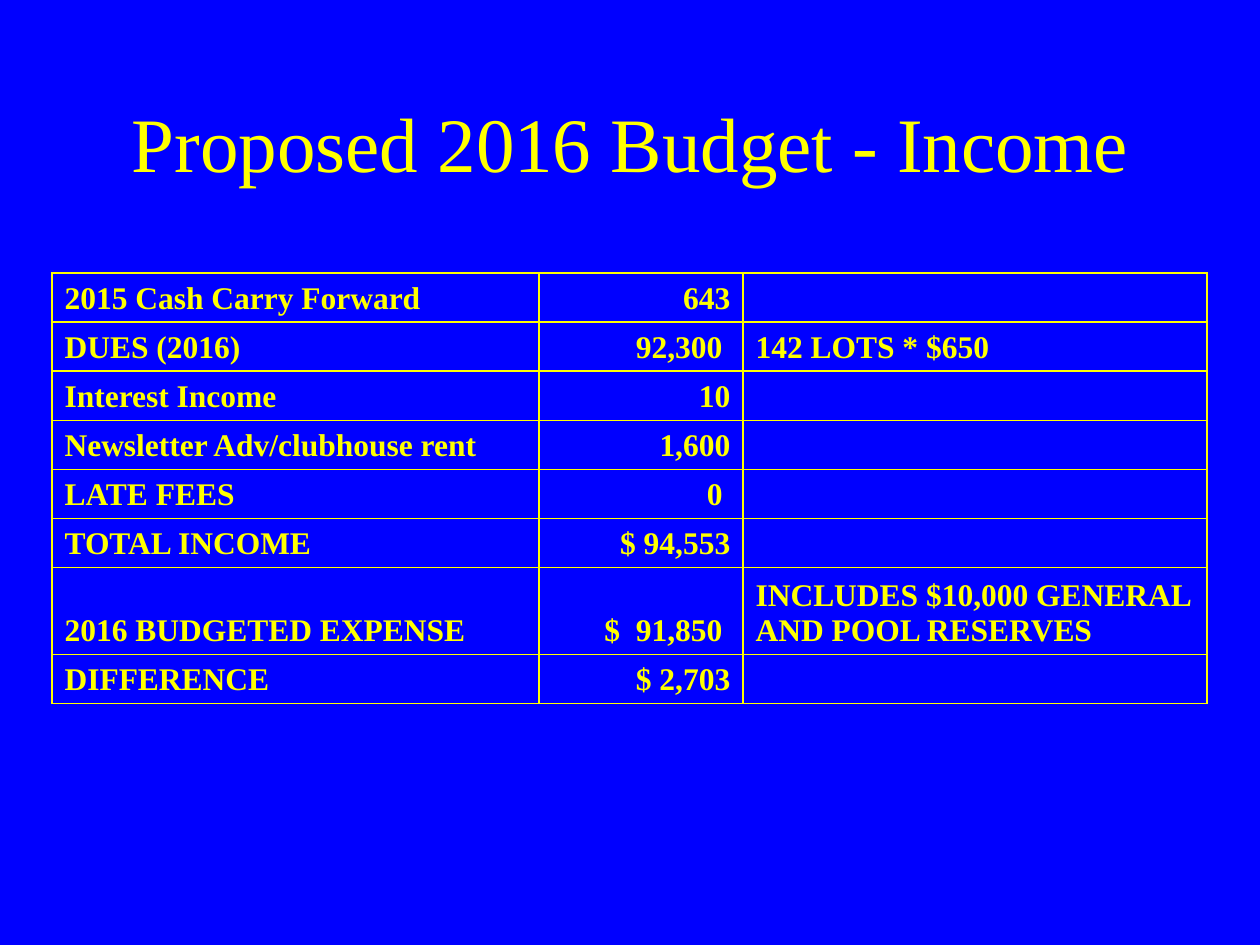
from dataclasses import dataclass

from lxml.etree import SubElement
from pptx import Presentation
from pptx.dml.color import RGBColor
from pptx.enum.text import MSO_ANCHOR as Anchor, PP_ALIGN as Align
from pptx.oxml.ns import qn
from pptx.util import Emu, Pt

EMU_PER_PX = 914400 / 126
COLORS = {"background": "0000FF", "ink": "FFFF00"}
FONT = "Times New Roman"
TITLE_FORMAT = {"name": FONT, "size": Pt(44), "bold": False}
CELL_FORMAT = {"name": FONT, "size": Pt(18), "bold": True}
COLUMN_WIDTHS = (487, 204, 464)
COLUMN_ALIGNS = (Align.LEFT, Align.RIGHT, Align.LEFT)
TOP_MARGIN = 5


@dataclass
class BudgetRow:
    height: int
    label: str
    amount: str
    note: str = ""


BUDGET = [
    BudgetRow(47, "2015 Cash Carry Forward", "643"),
    BudgetRow(48, "DUES (2016)", "92,300 ", "142 LOTS * $650"),
    BudgetRow(47, "Interest Income", "10"),
    BudgetRow(48, "Newsletter Adv/clubhouse rent", "1,600"),
    BudgetRow(47, "LATE FEES", "0 "),
    BudgetRow(48, "TOTAL INCOME", "$ 94,553"),
    BudgetRow(82, "2016 BUDGETED EXPENSE", "$  91,850 ",
              "INCLUDES $10,000 GENERAL AND POOL RESERVES"),
    BudgetRow(48, "DIFFERENCE", "$ 2,703"),
]


def px(length: int) -> Emu:
    return Emu(round(length * EMU_PER_PX))


def color(name: str) -> RGBColor:
    return RGBColor.from_string(COLORS[name])


def write(para, text: str, align: Align, text_format: dict) -> None:
    para.alignment = align
    span = para.add_run()
    span.text = text
    for name, value in text_format.items():
        setattr(span.font, name, value)
    span.font.color.rgb = color("ink")


def add_title(slide, text: str) -> None:
    box = slide.shapes.add_textbox(px(95), px(84), px(1071), px(116))
    frame = box.text_frame
    frame.word_wrap = True
    frame.vertical_anchor = Anchor.MIDDLE
    write(frame.paragraphs[0], text, Align.CENTER, TITLE_FORMAT)


def add_borders(cell) -> None:
    properties = cell._tc.get_or_add_tcPr()
    for side in ("a:lnL", "a:lnR", "a:lnT", "a:lnB"):
        line = SubElement(properties, qn(side), w=str(Pt(1)))
        fill = SubElement(line, qn("a:solidFill"))
        SubElement(fill, qn("a:srgbClr"), val=COLORS["ink"])


def fill_cell(cell, text: str, align: Align) -> None:
    cell.vertical_anchor = Anchor.BOTTOM
    cell.margin_top = px(TOP_MARGIN)
    add_borders(cell)
    cell.fill.background()
    para = cell.text_frame.paragraphs[0]
    if text:
        write(para, text, align, CELL_FORMAT)
    else:
        # Keeps an empty cell from stretching its row.
        SubElement(para._p, qn("a:endParaRPr"), sz="1200")


def add_budget_table(slide, rows: list[BudgetRow]) -> None:
    table = slide.shapes.add_table(
        len(rows), len(COLUMN_WIDTHS), px(52), px(273),
        px(sum(COLUMN_WIDTHS)), px(sum(row.height for row in rows))).table
    table.first_row = table.horz_banding = False
    for column, width in zip(table.columns, COLUMN_WIDTHS):
        column.width = px(width)
    for table_row, row in zip(table.rows, rows):
        table_row.height = px(row.height)
        texts = (row.label, row.amount, row.note)
        for cell, text, align in zip(table_row.cells, texts, COLUMN_ALIGNS):
            fill_cell(cell, text, align)


def main() -> None:
    deck = Presentation()
    deck.slide_width, deck.slide_height = px(1260), px(945)
    slide = deck.slides.add_slide(deck.slide_layouts[6])
    background = slide.background.fill
    background.solid()
    background.fore_color.rgb = color("background")
    add_title(slide, "Proposed 2016 Budget - Income")
    add_budget_table(slide, BUDGET)
    deck.save("out.pptx")


if __name__ == "__main__":
    main()
